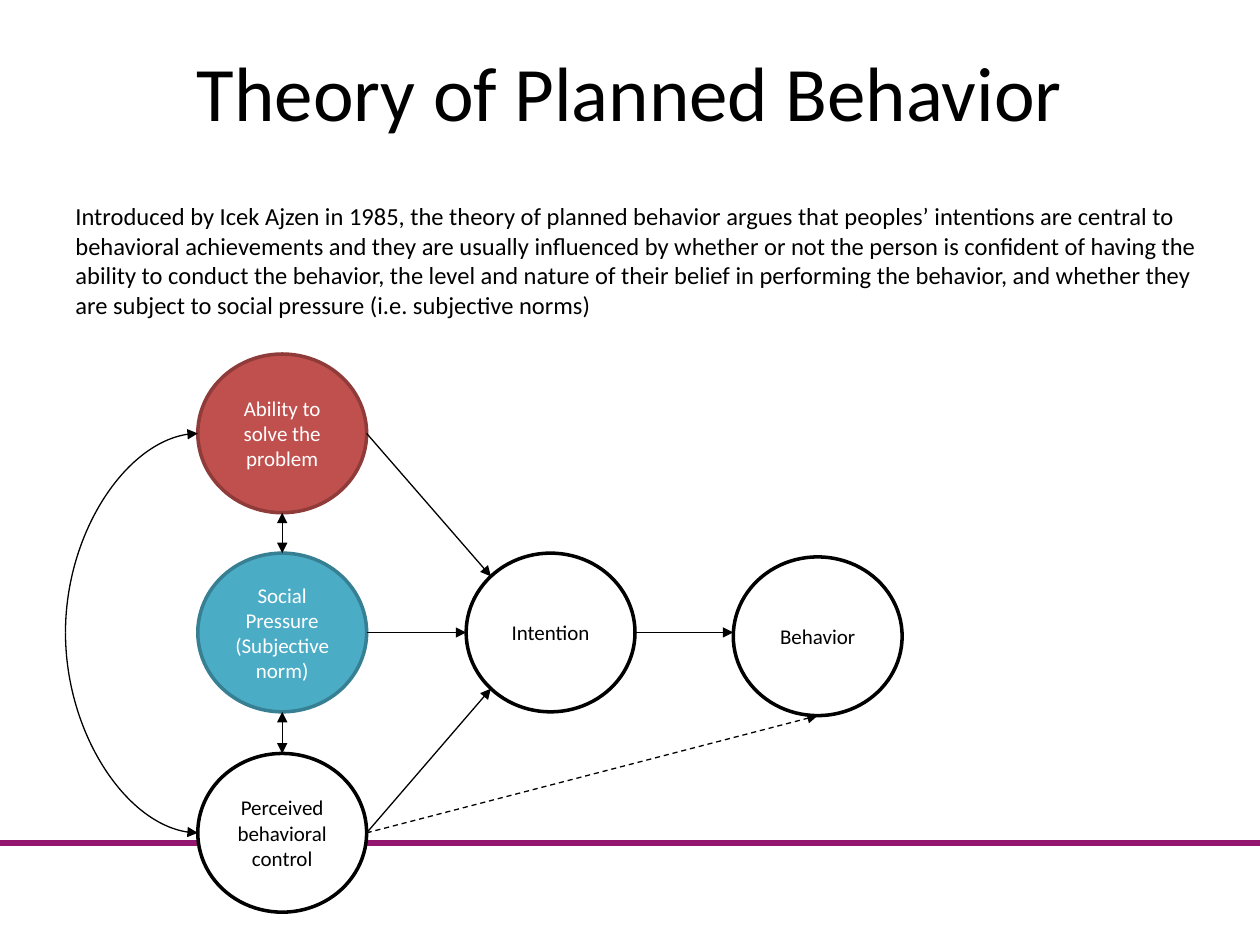
from dataclasses import dataclass
from math import sqrt

from lxml.etree import SubElement
from pptx import Presentation
from pptx.dml.color import RGBColor
from pptx.enum.dml import MSO_LINE_DASH_STYLE as Dash
from pptx.enum.shapes import MSO_CONNECTOR as Link, MSO_SHAPE as Shape
from pptx.enum.text import MSO_ANCHOR as Anchor, MSO_AUTO_SIZE as Fit, PP_ALIGN as Align
from pptx.oxml.ns import qn
from pptx.util import Inches, Pt


@dataclass(frozen=True)
class Theme:
    font: str = "Calibri"
    black: str = "000000"
    white: str = "FFFFFF"
    red: str = "C0504D"
    red_edge: str = "8E3B39"
    teal: str = "4BACC6"
    teal_edge: str = "377F92"
    purple: str = "93166F"
    title_size: float = 44
    body_size: float = 14
    node_size: float = 12
    rule_width: float = 3
    node_line: float = 2
    arrow_line: float = 0.75


THEME = Theme()
NODE_WIDTH, NODE_HEIGHT = 1.34, 1.26
COLUMNS = [1.57, 3.7, 5.82]
ROWS = [2.81, 4.39, 5.98]
BEHAVIOR_TOP = 4.42
LOOP_LEFT = 0.52
INTRODUCTION = (
    "Introduced by Icek Ajzen in 1985, the theory of planned behavior argues that "
    "peoples’ intentions are central to behavioral achievements and they are usually "
    "influenced by whether or not the person is confident of having the ability to "
    "conduct the behavior, the level and nature of their belief in performing the "
    "behavior, and whether they are subject to social pressure (i.e. subjective norms)"
)


def write(frame, text, size, color, align=Align.LEFT, anchor=Anchor.TOP):
    frame.word_wrap = True
    frame.vertical_anchor = anchor
    para = frame.paragraphs[0]
    para.alignment = align
    span = para.add_run()
    span.text = text
    span.font.name = THEME.font
    span.font.size = Pt(size)
    span.font.color.rgb = RGBColor.from_string(color)


def add_title(page, text):
    title = page.shapes.title
    title.left, title.top = Inches(0.5), Inches(0.3)
    title.width, title.height = Inches(9), Inches(1.25)
    write(title.text_frame, text, THEME.title_size, THEME.black, Align.CENTER)
    title.text_frame.auto_size = Fit.NONE


def add_introduction(page, text):
    box = page.shapes.add_textbox(Inches(0.5), Inches(1.55), Inches(9.22), Inches(1.04))
    write(box.text_frame, text, THEME.body_size, THEME.black)
    box.text_frame.auto_size = Fit.SHAPE_TO_FIT_TEXT


def add_node(page, text, left, top, fill=THEME.white, edge=THEME.black, color=THEME.black):
    node = page.shapes.add_shape(
        Shape.OVAL, Inches(left), Inches(top), Inches(NODE_WIDTH), Inches(NODE_HEIGHT)
    )
    node.shadow.inherit = False
    node.fill.solid()
    node.fill.fore_color.rgb = RGBColor.from_string(fill)
    node.line.color.rgb = RGBColor.from_string(edge)
    node.line.width = Pt(THEME.node_line)
    write(node.text_frame, text, THEME.node_size, color, Align.CENTER, Anchor.MIDDLE)
    return node


def rim(node, across, down):
    reach = sqrt(across**2 + down**2)
    return (
        round(node.left + node.width / 2 * (1 + across / reach)),
        round(node.top + node.height / 2 * (1 + down / reach)),
    )


def add_line(page, start, end, color=THEME.black, width=THEME.arrow_line,
             ends=(), kind=Link.STRAIGHT, dash=None):
    line = page.shapes.add_connector(kind, *start, *end)
    line.line.color.rgb = RGBColor.from_string(color)
    line.line.width = Pt(width)
    if dash:
        line.line.dash_style = dash
    outline = line.line._get_or_add_ln()
    for name in ends:
        SubElement(outline, qn(f"a:{name}"), type="triangle")
    properties = line._element.spPr
    SubElement(properties, qn("a:effectLst"))
    if kind == Link.CURVE:
        properties.find(qn("a:prstGeom")).set("prst", "curvedConnector2")


def add_arrows(page, ability, pressure, control, intention, behavior):
    one_way, both_ways = ("tailEnd",), ("headEnd", "tailEnd")
    intention_right = rim(intention, 1, 0)
    for start, end in [
        (rim(ability, 1, 0), rim(intention, -1, -1)),
        (rim(pressure, 1, 0), rim(intention, -1, 0)),
        (intention_right, (behavior.left, intention_right[1])),
        (rim(control, 1, 0), rim(intention, -1, 1)),
    ]:
        add_line(page, start, end, ends=one_way)
    for upper, lower in [(ability, pressure), (pressure, control)]:
        add_line(page, rim(upper, 0, 1), rim(lower, 0, -1), ends=both_ways)
    add_line(page, rim(control, 1, 0), rim(behavior, 0, 1), ends=one_way, dash=Dash.DASH)
    loop_middle = Inches(LOOP_LEFT), rim(pressure, -1, 0)[1]
    for node in (ability, control):
        add_line(page, rim(node, -1, 0), loop_middle, ends=("headEnd",), kind=Link.CURVE)


def main():
    deck = Presentation()
    deck.slide_width, deck.slide_height = Inches(10), Inches(7.5)
    page = deck.slides.add_slide(deck.slide_layouts[5])
    rule_height = Inches(6.69)
    add_line(page, (0, rule_height), (deck.slide_width, rule_height),
             THEME.purple, THEME.rule_width)
    add_title(page, "Theory of Planned Behavior")
    add_introduction(page, INTRODUCTION)
    factors, middle, last = COLUMNS
    ability = add_node(page, "Ability to solve the problem", factors, ROWS[0],
                       THEME.red, THEME.red_edge, THEME.white)
    pressure = add_node(page, "Social Pressure (Subjective norm)", factors, ROWS[1],
                        THEME.teal, THEME.teal_edge, THEME.white)
    control = add_node(page, "Perceived behavioral control", factors, ROWS[2])
    intention = add_node(page, "Intention", middle, ROWS[1])
    behavior = add_node(page, "Behavior", last, BEHAVIOR_TOP)
    add_arrows(page, ability, pressure, control, intention, behavior)
    deck.save("out.pptx")


if __name__ == "__main__":
    main()
